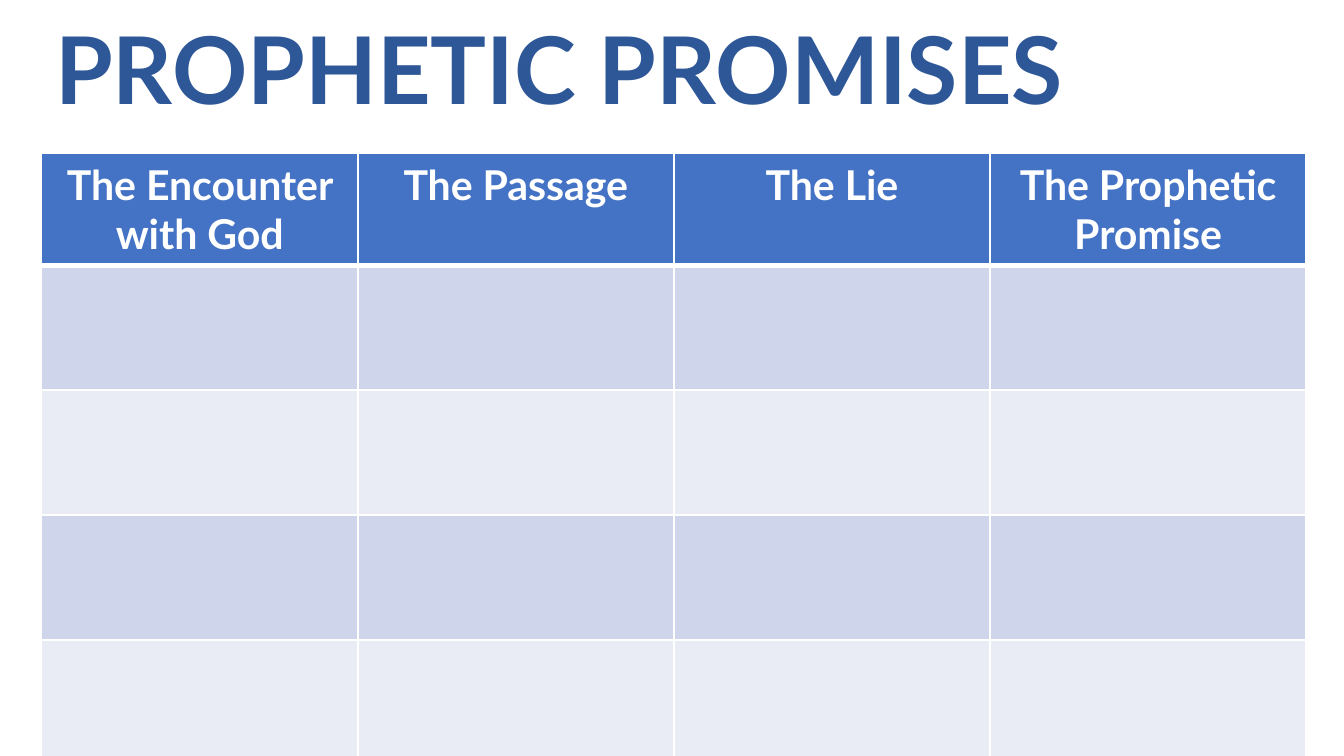
from lxml import etree
from pptx import Presentation
from pptx.dml.color import RGBColor
from pptx.enum.text import MSO_ANCHOR, MSO_AUTO_SIZE, PP_ALIGN
from pptx.oxml.ns import qn
from pptx.util import Inches, Pt

LEFT, CENTER = PP_ALIGN.LEFT, PP_ALIGN.CENTER
MIDDLE = MSO_ANCHOR.MIDDLE
NO_AUTOFIT = MSO_AUTO_SIZE.NONE

FONT = "Lato"
NAVY = RGBColor(0x2E, 0x57, 0x97)
BLUE = RGBColor(0x44, 0x72, 0xC4)
WHITE = RGBColor(0xFF, 0xFF, 0xFF)
BANDS = [RGBColor(0xCF, 0xD5, 0xEA), RGBColor(0xE9, 0xEB, 0xF5)]

HEADINGS = ["The Encounter with God", "The Passage", "The Lie", "The Prophetic Promise"]
BODY_ROWS = 4
HEADER_HEIGHT = 0.83
BODY_HEIGHT = 0.93


def write_text(frame, text, size, color, align, spacing=1.0):
    para = frame.paragraphs[0]
    para.alignment = align
    para.line_spacing = spacing
    span = para.add_run()
    span.text = text
    span.font.name = FONT
    span.font.size = Pt(size)
    span.font.bold = True
    span.font.color.rgb = color


def set_borders(cell, color, **widths):
    properties = cell._tc.get_or_add_tcPr()
    for position, side in enumerate(("L", "R", "T", "B")):
        line = etree.Element(qn(f"a:ln{side}"), w=str(Pt(widths.get(side, 1))))
        fill = etree.SubElement(line, qn("a:solidFill"))
        etree.SubElement(fill, qn("a:srgbClr"), val=str(color))
        properties.insert(position, line)


def fill_cell(cell, color, **widths):
    cell.fill.solid()
    cell.fill.fore_color.rgb = color
    set_borders(cell, WHITE, **widths)


def add_title(page, left, top, width, height):
    title = page.shapes.title
    title.left, title.top = Inches(left), Inches(top)
    title.width, title.height = Inches(width), Inches(height)
    frame = title.text_frame
    frame.word_wrap = True
    frame.auto_size = NO_AUTOFIT
    frame.vertical_anchor = MIDDLE
    write_text(frame, "PROPHETIC PROMISES", 50, NAVY, LEFT, spacing=0.9)


def add_promise_table(page, left, top, width):
    height = HEADER_HEIGHT + BODY_ROWS * BODY_HEIGHT
    table = page.shapes.add_table(
        BODY_ROWS + 1, len(HEADINGS),
        Inches(left), Inches(top), Inches(width), Inches(height),
    ).table
    for row in table.rows:
        row.height = Inches(BODY_HEIGHT)
    table.rows[0].height = Inches(HEADER_HEIGHT)
    for column, heading in enumerate(HEADINGS):
        header = table.cell(0, column)
        fill_cell(header, BLUE, B=3)
        write_text(header.text_frame, heading, 22, WHITE, CENTER)
        for row in range(1, BODY_ROWS + 1):
            top_width = 3 if row == 1 else 1
            fill_cell(table.cell(row, column), BANDS[(row - 1) % 2], T=top_width)


def main():
    deck = Presentation()
    deck.slide_width = Inches(10)
    deck.slide_height = deck.slide_width * 9 // 16
    page = deck.slides.add_slide(deck.slide_layouts[5])
    add_title(page, 0.31, 0.12, 9.6, 0.86)
    add_promise_table(page, 0.31, 1.14, 9.41)
    deck.save("out.pptx")


if __name__ == "__main__":
    main()
